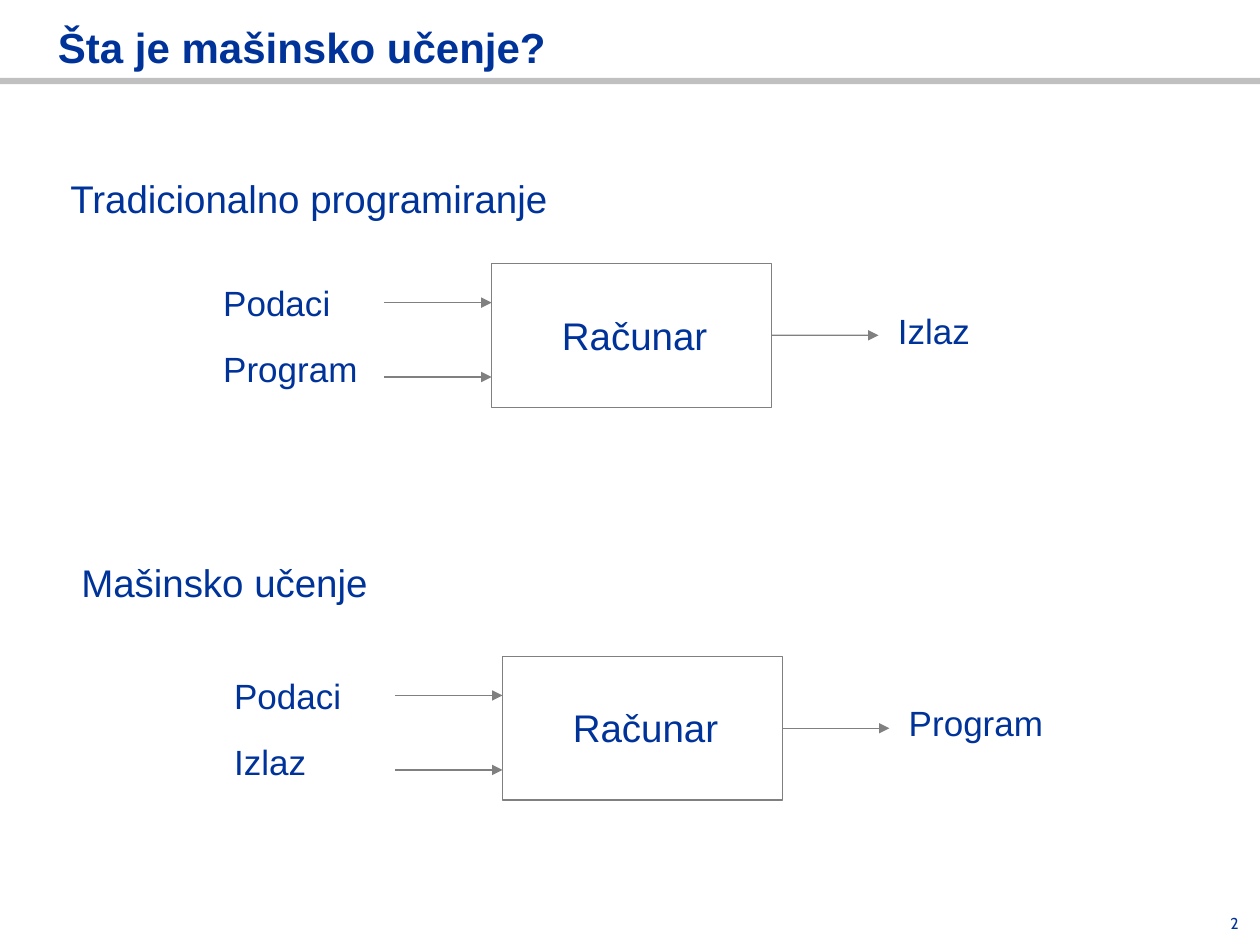
from dataclasses import dataclass

from lxml.etree import SubElement
from pptx import Presentation
from pptx.dml.color import RGBColor
from pptx.enum.shapes import MSO_CONNECTOR as Line, MSO_SHAPE as Preset
from pptx.enum.text import MSO_ANCHOR as Anchor, MSO_AUTO_SIZE as AutoSize, PP_ALIGN as Align
from pptx.oxml.ns import qn
from pptx.util import Cm, Pt


@dataclass(frozen=True)
class Theme:
    text: RGBColor = RGBColor(0x00, 0x33, 0x99)
    outline: RGBColor = RGBColor(0x80, 0x80, 0x80)
    rule: RGBColor = RGBColor(0xC0, 0xC0, 0xC0)
    font: str = "Arial"
    number_font: str = "Cabin"
    title_size: int = 24
    heading_size: int = 22
    label_size: int = 20
    number_size: int = 9
    line_width: float = 0.75


@dataclass(frozen=True)
class Process:
    """A computer with two inputs and one output; lengths in cm."""
    heading: str
    heading_top: float
    left: float
    top: float
    inputs: tuple[str, str]
    output: str


THEME = Theme()
BOX_WIDTH, BOX_HEIGHT = 5.64, 2.9
ARROW_LENGTH = 2.16
LABEL_WIDTH, LABEL_HEIGHT, HEADING_HEIGHT = 4.06, 1.12, 1.19
ARROW_DROPS = (0.79, 2.29)
LABEL_DROPS = (0.23, 1.57)

PROCESSES = (
    Process("Tradicionalno programiranje", 3.4, 9.91, 5.31, ("Podaci", "Program"), "Izlaz"),
    Process("Mašinsko učenje", 11.13, 10.13, 13.23, ("Podaci", "Izlaz"), "Program"),
)


def add_text(page, text: str, left: float, top: float, width: float, height: float, *,
             size: int = THEME.label_size, font: str = THEME.font, bold: bool = False,
             align=Align.LEFT, anchor=Anchor.TOP, wrap: bool = True,
             grow: bool = True, margins: tuple[float, float] = (0.25, 0.13)):
    box = page.shapes.add_textbox(Cm(left), Cm(top), Cm(width), Cm(height))
    frame = box.text_frame
    frame.word_wrap = wrap
    frame.auto_size = AutoSize.SHAPE_TO_FIT_TEXT if grow else AutoSize.NONE
    frame.vertical_anchor = anchor
    frame.margin_left = frame.margin_right = Cm(margins[0])
    frame.margin_top = frame.margin_bottom = Cm(margins[1])
    para = frame.paragraphs[0]
    para.alignment = align
    span = para.add_run()
    span.text = text
    span.font.name = font
    span.font.size = Pt(size)
    span.font.bold = bold
    span.font.color.rgb = THEME.text
    return box


def add_box(page, left: float, top: float, width: float, height: float, fill: RGBColor | None = None):
    """Draw a filled rectangle without outline, or an outlined one without fill."""
    box = page.shapes.add_shape(Preset.RECTANGLE, Cm(left), Cm(top), Cm(width), Cm(height))
    box.shadow.inherit = False
    if fill is None:
        box.fill.background()
        box.line.color.rgb = THEME.outline
        box.line.width = Pt(THEME.line_width)
    else:
        box.fill.solid()
        box.fill.fore_color.rgb = fill
        box.line.fill.background()
    return box


def add_arrow(page, left: float, y: float):
    arrow = page.shapes.add_connector(Line.STRAIGHT, Cm(left), Cm(y), Cm(left + ARROW_LENGTH), Cm(y))
    arrow.line.color.rgb = THEME.outline
    arrow.line.width = Pt(THEME.line_width)
    SubElement(arrow.line._get_or_add_ln(), qn("a:tailEnd"), type="triangle")
    SubElement(arrow._element.spPr, qn("a:effectLst"))
    return arrow


def add_process(page, process: Process) -> None:
    left, top = process.left, process.top
    right = left + BOX_WIDTH

    # Heading and computer
    add_text(page, process.heading, left - 8.74, process.heading_top, 11.05, HEADING_HEIGHT,
             size=THEME.heading_size)
    computer = add_box(page, left, top, BOX_WIDTH, BOX_HEIGHT)
    add_text(page, "Računar", left + 1.17, top + 0.84, LABEL_WIDTH, HEADING_HEIGHT,
             size=THEME.heading_size)

    # Inputs
    for label, arrow_drop, label_drop in zip(process.inputs, ARROW_DROPS, LABEL_DROPS):
        add_arrow(page, left - ARROW_LENGTH, top + arrow_drop)
        add_text(page, label, left - 5.66, top + label_drop, LABEL_WIDTH, LABEL_HEIGHT)

    # Output
    add_arrow(page, right, top + BOX_HEIGHT / 2).begin_connect(computer, 3)
    add_text(page, process.output, right + 2.3, top + 0.79, LABEL_WIDTH, LABEL_HEIGHT)


def main() -> None:
    deck = Presentation()
    deck.slide_width, deck.slide_height = Cm(25.4), Cm(19.05)
    page = deck.slides.add_slide(deck.slide_layouts[6])

    # Page number, rule and title
    add_text(page, "2", 24.49, 18.42, 0.48, 0.38, size=THEME.number_size, font=THEME.number_font,
             align=Align.RIGHT, wrap=False, grow=False, margins=(0, 0))
    add_box(page, 0, 1.57, 25.4, 0.13, fill=THEME.rule)
    add_text(page, "Šta je mašinsko učenje?", 1.17, 0.28, 20.19, 1.3, size=THEME.title_size,
             bold=True, anchor=Anchor.BOTTOM, grow=False, margins=(0, 0.13))

    # Diagrams
    for process in PROCESSES:
        add_process(page, process)

    deck.save("out.pptx")


if __name__ == "__main__":
    main()
